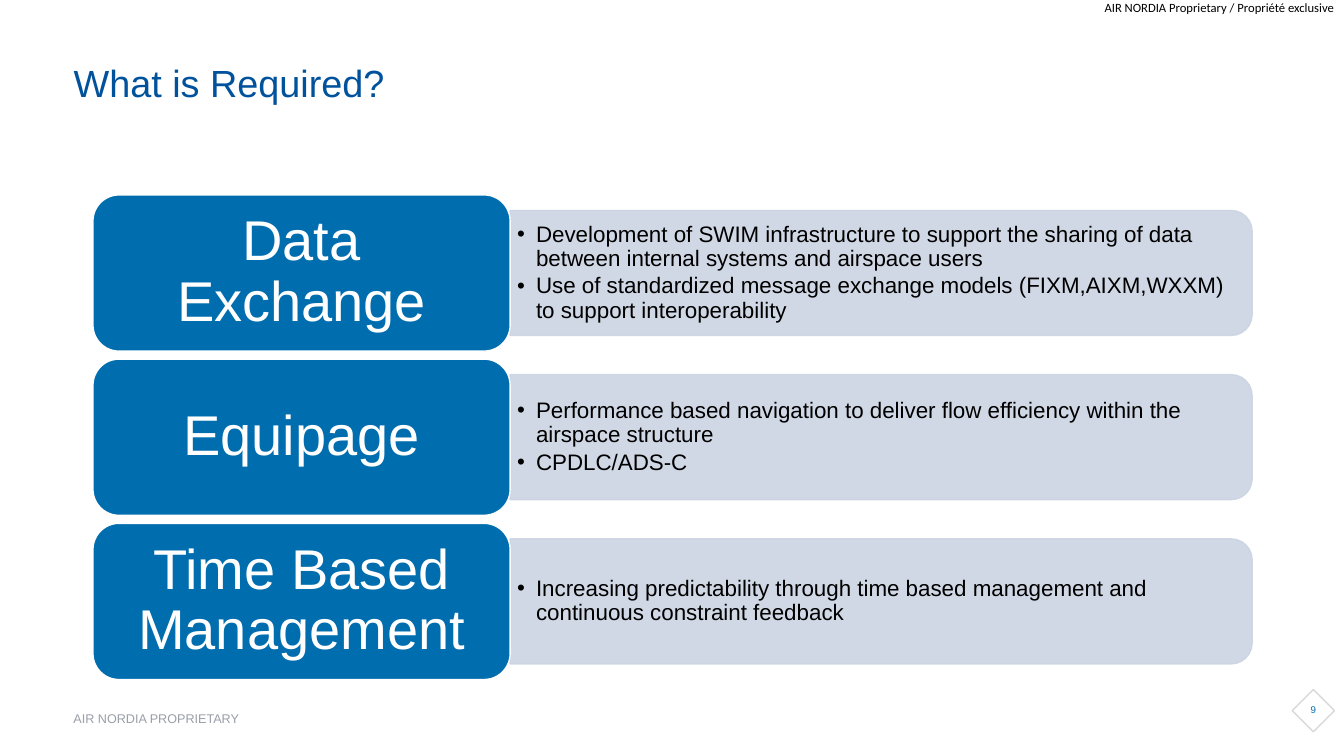
from lxml import etree
from pptx import Presentation
from pptx.dml.color import RGBColor
from pptx.enum.shapes import MSO_SHAPE
from pptx.enum.text import MSO_ANCHOR, MSO_AUTO_SIZE, PP_ALIGN
from pptx.oxml.ns import qn
from pptx.util import Pt

LEFT, CENTER = PP_ALIGN.LEFT, PP_ALIGN.CENTER
TOP, MIDDLE, BOTTOM = MSO_ANCHOR.TOP, MSO_ANCHOR.MIDDLE, MSO_ANCHOR.BOTTOM
FIXED = MSO_AUTO_SIZE.NONE
ROUND, HALF_ROUND = MSO_SHAPE.ROUNDED_RECTANGLE, MSO_SHAPE.ROUND_2_SAME_RECTANGLE
DIAMOND = MSO_SHAPE.DIAMOND

NAVY = RGBColor(0x00, 0x52, 0x9C)
BLUE = RGBColor(0x00, 0x6D, 0xAF)
PALE = RGBColor(0xCC, 0xD4, 0xE3)
GREY = RGBColor(0x99, 0x9F, 0xA8)
SILVER = RGBColor(0xDA, 0xD9, 0xD9)
WHITE = RGBColor(0xFF, 0xFF, 0xFF)
BLACK = RGBColor(0x00, 0x00, 0x00)

TILE_X, TILE_Y, TILE_W, TILE_H = 66.4, 139.2, 298, 111.6
BAR_W, BAR_H = 530, 89.3
LIST_W, LIST_H = 525.6, 80.6
PITCH = 117.3

ROWS = [
    ("Data Exchange", [
        "Development of SWIM infrastructure to support the sharing of data "
        "between internal systems and airspace users",
        "Use of standardized message exchange models (FIXM,AIXM,WXXM) "
        "to support interoperability"]),
    ("Equipage", [
        "Performance based navigation to deliver flow efficiency within "
        "the airspace structure",
        "CPDLC/ADS-C"]),
    ("Time Based Management", [
        "Increasing predictability through time based management and "
        "continuous constraint feedback"]),
]


def place(shape, x, y, w, h):
    shape.left, shape.top, shape.width, shape.height = Pt(x), Pt(y), Pt(w), Pt(h)


def write(shape, lines, size, color, font="Arial", align=LEFT, anchor=TOP,
          inset=(7.2, 3.6), spacing=1.0, after=0, wrap=True, bullet=False):
    frame = shape.text_frame
    frame.auto_size = FIXED
    frame.word_wrap = wrap
    frame.vertical_anchor = anchor
    frame.margin_left = frame.margin_right = Pt(inset[0])
    frame.margin_top = frame.margin_bottom = Pt(inset[1])
    frame.text = "\n".join(lines)
    for para in frame.paragraphs:
        para.alignment = align
        para.line_spacing = spacing
        para.space_before, para.space_after = Pt(0), Pt(after)
        face = para.runs[0].font
        face.name, face.size, face.bold = font, Pt(size), False
        face.color.rgb = color
        if bullet:
            add_bullet(para)


def add_bullet(para):
    props = para._p.get_or_add_pPr()
    props.set("marL", str(Pt(13.5)))
    props.set("indent", str(-Pt(13.5)))
    etree.SubElement(props, qn("a:buFont")).set("typeface", "Arial")
    etree.SubElement(props, qn("a:buChar")).set("char", "•")


def add_shape(slide, kind, box, fill, line):
    shape = slide.shapes.add_shape(kind, *map(Pt, box))
    shape.shadow.inherit = False
    shape.fill.solid()
    shape.fill.fore_color.rgb = fill
    shape.line.color.rgb = line
    shape.line.width = Pt(1)
    return shape


def add_label(slide, box, text, **style):
    write(slide.shapes.add_textbox(*map(Pt, box)), [text], **style)


def add_bar(slide, x, mid):
    """Add a see-through bar, turned so that its round corners face right."""
    box = (x + (BAR_W - BAR_H) / 2, mid - BAR_W / 2, BAR_H, BAR_W)
    bar = add_shape(slide, HALF_ROUND, box, PALE, PALE)
    bar.rotation = 90
    for color in bar._element.spPr.iter(qn("a:srgbClr")):
        etree.SubElement(color, qn("a:alpha")).set("val", "90000")


def add_row(slide, body, top, name, points):
    mid = top + TILE_H / 2
    edge = TILE_X + TILE_W
    add_bar(slide, edge, mid)
    place(body, edge, mid - LIST_H / 2, LIST_W, LIST_H)
    write(body, points, size=16, color=BLACK, anchor=MIDDLE, inset=(5, 2.5),
          spacing=0.9, after=2.4, bullet=True)
    slide.shapes._spTree.append(body._element)  # list in front of its bar
    tile = add_shape(slide, ROUND, (TILE_X, top, TILE_W, TILE_H), BLUE, WHITE)
    write(tile, [name], size=40, color=WHITE, align=CENTER, anchor=MIDDLE,
          inset=(17.4, 11.2), spacing=0.9, after=14)


def main():
    deck = Presentation()
    deck.slide_width, deck.slide_height = Pt(960), Pt(540)
    slide = deck.slides.add_slide(deck.slide_layouts.get_by_name("Comparison"))
    title, *bodies = slide.placeholders

    add_label(slide, (789, 0, 171, 11), "AIR NORDIA Proprietary / Propriété exclusive",
              size=9, color=BLACK, font="Calibri", inset=(0, 0), wrap=False)
    place(title, 45.4, 41, 846.7, 38.2)
    write(title, ["What is Required?"], size=27, color=NAVY, anchor=BOTTOM,
          spacing=0.9)
    add_label(slide, (45.4, 493.2, 846.7, 28.8), "AIR NORDIA PROPRIETARY",
              size=9, color=GREY, anchor=BOTTOM, after=6)
    badge = add_shape(slide, DIAMOND, (923, 492.5, 30.2, 30.2), WHITE, SILVER)
    write(badge, ["9"], size=7, color=BLUE, align=CENTER, anchor=MIDDLE,
          spacing=0.9, after=6, wrap=False)

    for i, (name, points) in enumerate(ROWS):
        add_row(slide, bodies[i], TILE_Y + i * PITCH, name, points)
    for spare in bodies[len(ROWS):]:
        slide.shapes._spTree.remove(spare._element)
    deck.save("out.pptx")


if __name__ == "__main__":
    main()
